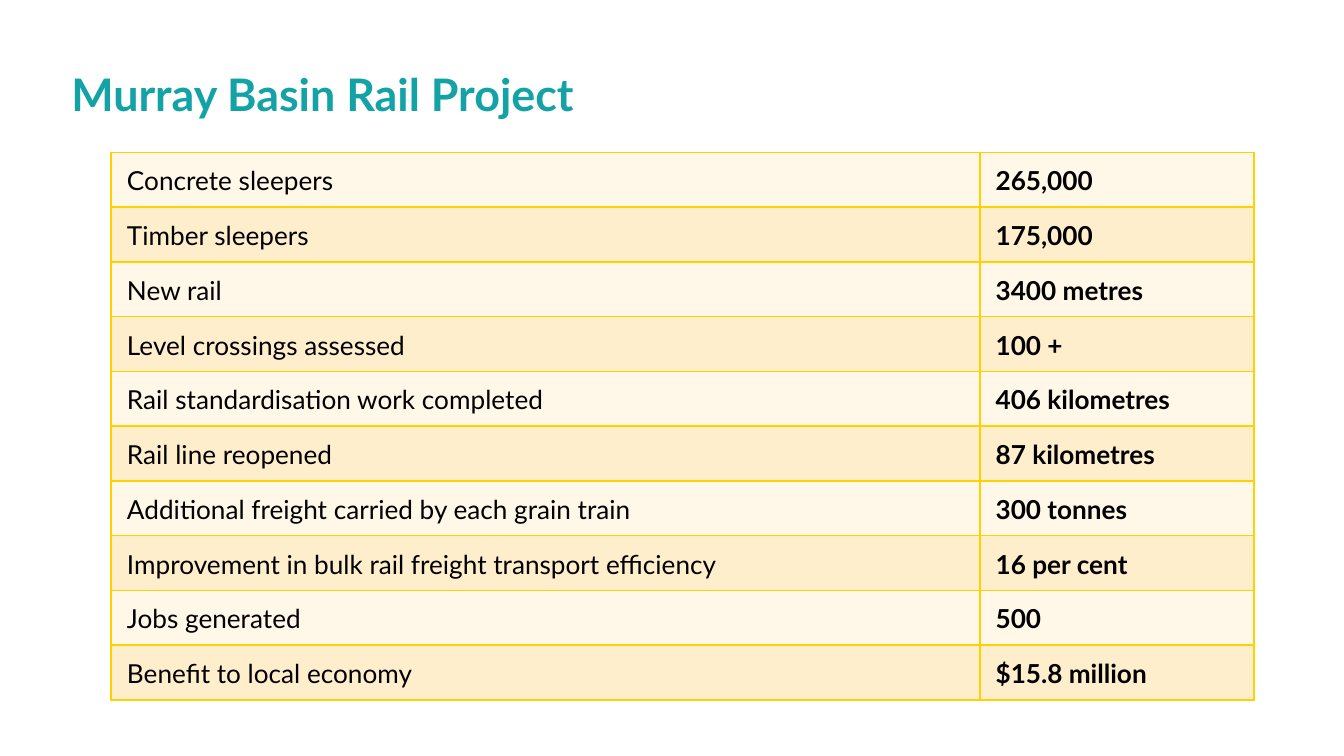
from dataclasses import dataclass

from lxml import etree
from pptx import Presentation
from pptx.dml.color import RGBColor
from pptx.enum.text import MSO_ANCHOR
from pptx.oxml.ns import qn
from pptx.util import Cm, Pt

TOP = MSO_ANCHOR.TOP
MIDDLE = MSO_ANCHOR.MIDDLE


@dataclass(frozen=True)
class Theme:
    font: str = "Lato"
    title_size: int = 24
    table_size: int = 14
    title: str = "13A2A6"
    text: str = "000000"
    border: str = "FFD100"
    bands: tuple = ("FFF7E7", "FFEECC")


THEME = Theme()

FACTS = [
    ("Concrete sleepers", "265,000"),
    ("Timber sleepers", "175,000"),
    ("New rail", "3400 metres"),
    ("Level crossings assessed", "100 +"),
    ("Rail standardisation work completed", "406 kilometres"),
    ("Rail line reopened", "87 kilometres"),
    ("Additional freight carried by each grain train", "300 tonnes"),
    ("Improvement in bulk rail freight transport efficiency", "16 per cent"),
    ("Jobs generated", "500"),
    ("Benefit to local economy", "$15.8 million"),
]


def write_text(frame, text, *, size, color, bold=False, line_spacing=1.0, space_after=0):
    frame.word_wrap = True
    paragraph = frame.paragraphs[0]
    paragraph.line_spacing = line_spacing
    paragraph.space_after = Pt(space_after)
    run = paragraph.add_run()
    run.text = text
    run.font.name = THEME.font
    run.font.size = Pt(size)
    run.font.bold = bold
    run.font.color.rgb = RGBColor.from_string(color)


def set_borders(cell, color, width):
    """Line all four sides; the lines must come before the cell's fill."""
    properties = cell._tc.get_or_add_tcPr()
    for position, side in enumerate(("a:lnL", "a:lnR", "a:lnT", "a:lnB")):
        line = etree.Element(qn(side), w=str(Pt(width)))
        fill = etree.SubElement(line, qn("a:solidFill"))
        etree.SubElement(fill, qn("a:srgbClr"), val=color)
        properties.insert(position, line)


def add_title(slide, text, left, top, width, height):
    heading = slide.shapes.add_textbox(left, top, width, height).text_frame
    heading.vertical_anchor = TOP
    write_text(heading, text, size=THEME.title_size, color=THEME.title,
               bold=True, line_spacing=0.9)


def add_facts_table(slide, facts, left, top, width, height, label_share=0.76):
    """Place label and value pairs in banded rows of equal height."""
    table = slide.shapes.add_table(len(facts), 2, left, top, width, height).table
    table.first_row = False
    table.horz_banding = False
    table.columns[0].width = int(width * label_share)
    table.columns[1].width = width - table.columns[0].width
    for row, fact in enumerate(facts):
        for column, text in enumerate(fact):
            cell = table.cell(row, column)
            cell.margin_left = cell.margin_right = Cm(0.3)
            cell.margin_top = cell.margin_bottom = Cm(0.2)
            cell.vertical_anchor = MIDDLE
            cell.fill.solid()
            cell.fill.fore_color.rgb = RGBColor.from_string(THEME.bands[row % 2])
            set_borders(cell, THEME.border, 1)
            write_text(cell.text_frame, text, size=THEME.table_size, color=THEME.text,
                       bold=column == 1, line_spacing=1.07, space_after=7.5)


def main():
    presentation = Presentation()
    presentation.slide_width = Cm(25.4)
    presentation.slide_height = Cm(14.29)
    blank = presentation.slide_layouts[6]
    slide = presentation.slides.add_slide(blank)
    add_facts_table(slide, FACTS, Cm(2.1), Cm(2.88), Cm(21.6), Cm(10.3))
    add_title(slide, "Murray Basin Rail Project", Cm(1.1), Cm(1.25), Cm(20), Cm(1.8))
    presentation.save("out.pptx")


if __name__ == "__main__":
    main()
